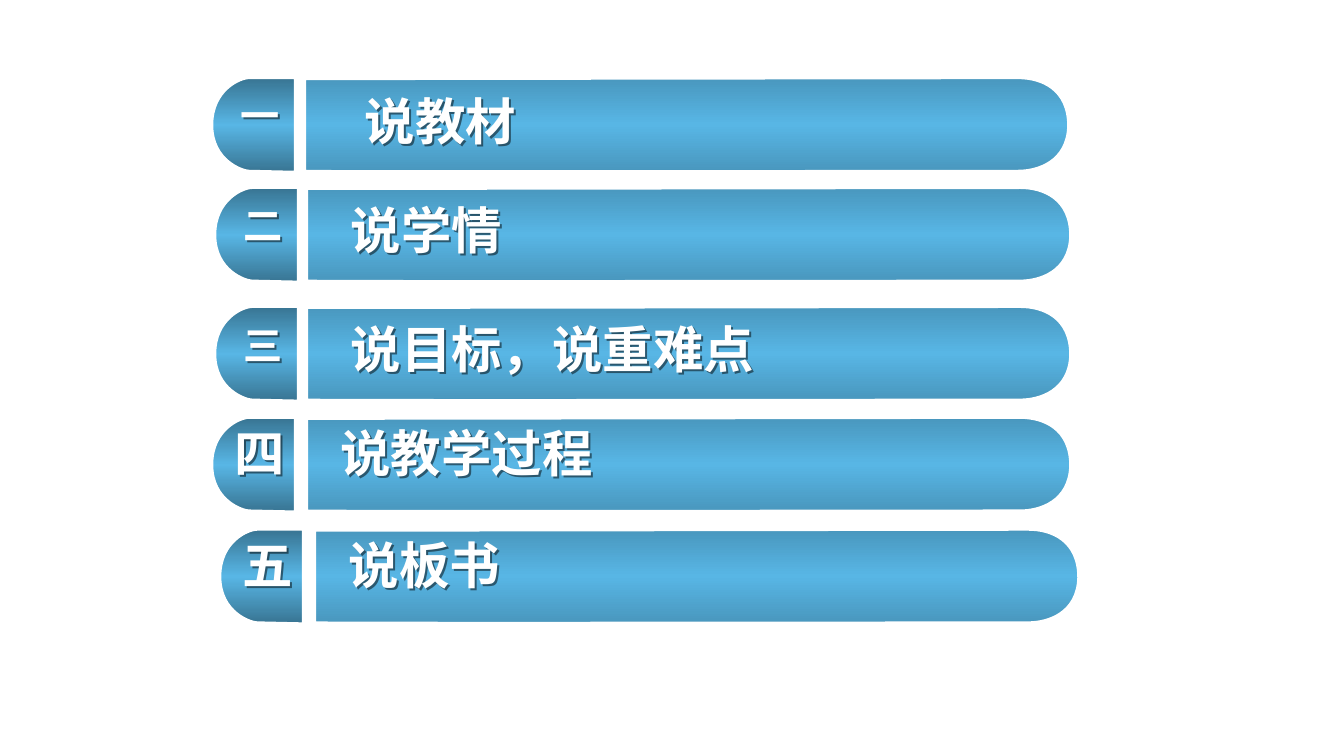
from pptx import Presentation
from pptx.util import Inches, Pt
from pptx.dml.color import RGBColor
from pptx.enum.text import PP_ALIGN as Align, MSO_AUTO_SIZE as Auto
from pptx.oxml import parse_xml

# Content: number, label, number size
ROWS = [
    ("一", "说教材", 28),
    ("二", "说学情", 28),
    ("三", "说目标，说重难点", 28),
    ("四", "说教学过程", 36),
    ("五", "说板书", 36),
]
# Inches: row top, tab left, bar left, label indent, number drop, label drop,
# label width, label height
SPOTS = [
    (0.77, 2.10, 3.02, 0.50, 0.09, 0.07, 4.32, 0.71),
    (1.86, 2.13, 3.04, 0.34, 0.09, 0.07, 4.48, 0.71),
    (3.04, 2.13, 3.04, 0.34, 0.10, 0.07, 4.56, 1.61),
    (4.14, 2.10, 3.04, 0.24, 0, 0, 4.87, 0.71),
    (5.25, 2.18, 3.12, 0.24, 0, 0, 4.87, 0.71),
]
WHITE, BLUE = "FFFFFF", "58B6E5"
TAB_DIM, BAR_DIM = 64, 83  # share of light left at the gradient's edges

# Outlines from the top left of each part: a pair is a line, six numbers a curve
TAB = [(0.83, 0),
       (0.83, 0.47, 0.83, 0.94, 0.83, 0.94),
       (0.37, 0.93),
       (0.31, 0.93, 0, 0.83, 0, 0.47),
       (0, 0.12, 0.28, 0, 0.37, 0),
       (0.83, 0)]
BAR = [(0, 0.01),
       (0, 0.93),
       (0.25, 0.94, 6.89, 0.93, 7.08, 0.93),
       (7.27, 0.93, 7.57, 0.84, 7.58, 0.48),
       (7.58, 0.11, 7.31, 0, 7.08, 0),
       (6.85, 0, 0.25, 0.01, 0, 0.01)]

NS = 'xmlns:a="http://schemas.openxmlformats.org/drawingml/2006/main"'


def rgb(code):
    return RGBColor.from_string(code)


def cast(part, code, dist, alpha):
    """Give a part a sharp shadow towards the lower right."""
    part.shadow.inherit = False
    part._element.spPr.find("{*}effectLst").append(parse_xml(
        f'<a:outerShdw {NS} dist="{Pt(dist)}" dir="2700000" algn="ctr">'
        f'<a:srgbClr val="{code}"><a:alpha val="{alpha * 1000}"/></a:srgbClr>'
        '</a:outerShdw>'))


def blend(part, dim):
    """Vertical gradient, bright in the middle."""
    part.fill.gradient()
    part.fill.gradient_angle = 270
    stops = part._element.spPr.find(".//{*}gsLst")
    for old in list(stops):
        stops.remove(old)
    shade = f'<a:gamma/><a:shade val="{dim * 1000}"/><a:invGamma/>'
    for pos, tone in ((0, shade), (50, ""), (100, shade)):
        stops.append(parse_xml(
            f'<a:gs {NS} pos="{pos * 1000}"><a:srgbClr val="{BLUE}">{tone}'
            '</a:srgbClr></a:gs>'))


def draw(slide, path, left, top, dim):
    steps = [[(Inches(left + x), Inches(top + y))
              for x, y in zip(step[::2], step[1::2])] for step in path]
    pen = slide.shapes.build_freeform(*steps[0][-1], scale=1.0)
    pen.add_line_segments([step[-1] for step in steps[1:]], close=True)
    part = pen.convert_to_shape()
    # Bend the segments that are curves
    lines = part._element.spPr.findall(".//{*}lnTo")
    for line, step in zip(lines, steps[1:]):
        if len(step) == 3:
            knots = "".join(f'<a:pt x="{x - part.left}" y="{y - part.top}"/>'
                            for x, y in step)
            line.getparent().replace(line, parse_xml(
                f'<a:cubicBezTo {NS}>{knots}</a:cubicBezTo>'))
    blend(part, dim)
    part.line.color.rgb = rgb(WHITE)
    part.line.width = Pt(2.25)
    cast(part, WHITE, 2.8, 100)


def write(slide, text, place, size, align):
    box = slide.shapes.add_textbox(*map(Inches, place))
    frame = box.text_frame
    frame.word_wrap = True
    frame.auto_size = Auto.SHAPE_TO_FIT_TEXT
    frame.text = text
    para = frame.paragraphs[0]
    para.alignment = align
    para._p.get_or_add_pPr().append(parse_xml(
        f'<a:spcBef {NS}><a:spcPct val="50000"/></a:spcBef>'))
    font = para.runs[0].font
    font.name, font.size, font.bold = "Arial", Pt(size), True
    font.color.rgb = rgb(WHITE)
    box.fill.background()
    cast(box, "000000", 2, 50)


def main():
    deck = Presentation()
    deck.slide_width, deck.slide_height = Inches(13.33), Inches(7.5)
    slide = deck.slides.add_slide(deck.slide_layouts[6])
    for (num, label, size), spot in zip(ROWS, SPOTS):
        top, tab, bar, indent, drop, fall, wide, high = spot
        draw(slide, TAB, tab, top, TAB_DIM)
        draw(slide, BAR, bar, top, BAR_DIM)
        tall = 0.71 if size == 36 else 0.57
        write(slide, num, (tab, top + drop, 0.96, tall), size, Align.CENTER)
        write(slide, label, (bar + indent, top + fall, wide, high), 36, Align.LEFT)
    deck.save("out.pptx")


if __name__ == "__main__":
    main()
